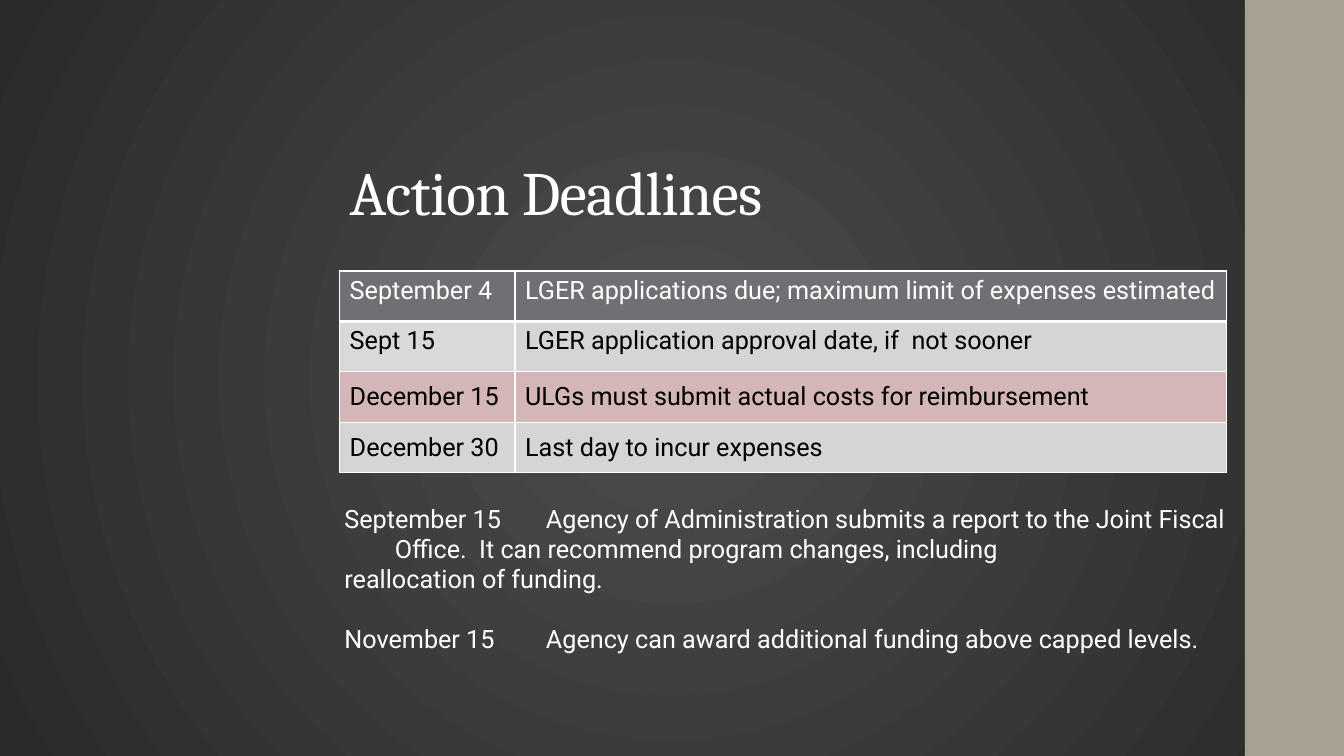
from pptx import Presentation
from pptx.dml.color import RGBColor
from pptx.enum.shapes import MSO_SHAPE as Shape
from pptx.enum.text import MSO_ANCHOR as Anchor, MSO_AUTO_SIZE as Auto, PP_ALIGN as Align
from pptx.oxml import parse_xml
from pptx.oxml.ns import nsdecls, qn
from pptx.util import Cm, Pt

WHITE = RGBColor(0xFF, 0xFF, 0xFF)
BLACK = RGBColor(0, 0, 0)
TAN = RGBColor(0xA7, 0xA1, 0x92)
SLATE = RGBColor(0x6F, 0x6F, 0x74)
MIST = RGBColor(0xD9, 0xD9, 0xDB)
GREY = RGBColor(0xD5, 0xD5, 0xD6)
ROSE = RGBColor(0xD3, 0xB6, 0xB5)
INNER = RGBColor(0x4C, 0x4C, 0x4C)
OUTER = RGBColor(0x2A, 0x2A, 0x2A)


def style(run, name, size, color):
    for key, val in {"name": name, "size": Pt(size)}.items():
        setattr(run.font, key, val)
    run.font.color.rgb = color


def edge(cell, side, width):
    cell._tc.get_or_add_tcPr().append(parse_xml(
        f'<a:{side} {nsdecls("a")} w="{Pt(width)}"><a:solidFill>'
        f'<a:srgbClr val="{WHITE}"/></a:solidFill></a:{side}>'))


deck = Presentation()
deck.slide_width, deck.slide_height = Cm(33.87), Cm(19.05)
slide = deck.slides.add_slide(deck.slide_layouts[5])

back = slide.background.fill
back.gradient()
for stop, color in zip(back.gradient_stops, (INNER, OUTER)):
    stop.color.rgb = color
for stop, place in zip(back.gradient_stops, (0, 1)):
    stop.position = place
grad = slide.element.find(".//" + qn("a:gradFill"))
grad.remove(grad.find(qn("a:lin")))
grad.append(parse_xml(
    f'<a:path {nsdecls("a")} path="circle">'
    '<a:fillToRect l="100000" t="100000" r="100000" b="100000"/></a:path>'))

band = slide.shapes.add_shape(Shape.RECTANGLE, Cm(31.37), 0, Cm(2.5), Cm(19.05))
band.shadow.inherit = False
band.fill.solid()
band.fill.fore_color.rgb = TAN
band.line.fill.background()

title = slide.shapes.title
place = {"left": 8.56, "top": 1.42, "width": 27.94, "height": 4.47}
for key, val in place.items():
    setattr(title, key, Cm(val))
frame = title.text_frame
frame.text = "Action Deadlines"
frame.auto_size = Auto.NONE
frame.vertical_anchor = Anchor.BOTTOM
para = frame.paragraphs[0]
para.alignment = Align.LEFT
para.line_spacing = 0.9
style(para.runs[0], "Cambria", 44, WHITE)
para.runs[0].font._element.set("spc", "-50")

rows = [
    ("September 4", "LGER applications due; maximum limit of expenses estimated",
     SLATE, SLATE, WHITE, Anchor.TOP),
    ("Sept 15", "LGER application approval date, if  not sooner",
     MIST, GREY, BLACK, Anchor.TOP),
    ("December 15", "ULGs must submit actual costs for reimbursement",
     ROSE, ROSE, BLACK, Anchor.MIDDLE),
    ("December 30", "Last day to incur expenses",
     GREY, GREY, BLACK, Anchor.MIDDLE),
]
table = slide.shapes.add_table(
    len(rows), 2, Cm(8.56), Cm(6.83), Cm(22.35), Cm(5.08)).table
table.horz_banding = False
for col, width in zip(table.columns, (4.42, 17.93)):
    col.width = Cm(width)
for r, (date, task, left, right, ink, anchor) in enumerate(rows):
    table.rows[r].height = Cm(1.27)
    for c, (text, fill) in enumerate(((date, left), (task, right))):
        cell = table.cell(r, c)
        cell.text = text
        cell.vertical_anchor = anchor
        style(cell.text_frame.paragraphs[0].runs[0], "Roboto", 18, ink)
        widths = {"lnL": 1, "lnR": 1, "lnT": 3 if r == 1 else 1, "lnB": 1 if r else 3}
        for side, width in widths.items():
            edge(cell, side, width)
        cell.fill.solid()
        cell.fill.fore_color.rgb = fill

notes = [
    "September 15 \tAgency of Administration submits a report to the Joint Fiscal\v"
    "\tOffice.  It can recommend program changes, including\v"
    "reallocation of funding.",
    "November 15 \tAgency can award additional funding above capped levels.",
]
box = slide.shapes.add_textbox(Cm(8.43), Cm(12.55), Cm(23.39), Cm(4.11))
frame = box.text_frame
frame.word_wrap = True
for i, text in enumerate(notes):
    para = frame.add_paragraph() if i else frame.paragraphs[0]
    para.text = text
    para.space_before = Pt(21.5 * i)
    for run in para.runs:
        style(run, "Roboto", 18, WHITE)

deck.save("out.pptx")
